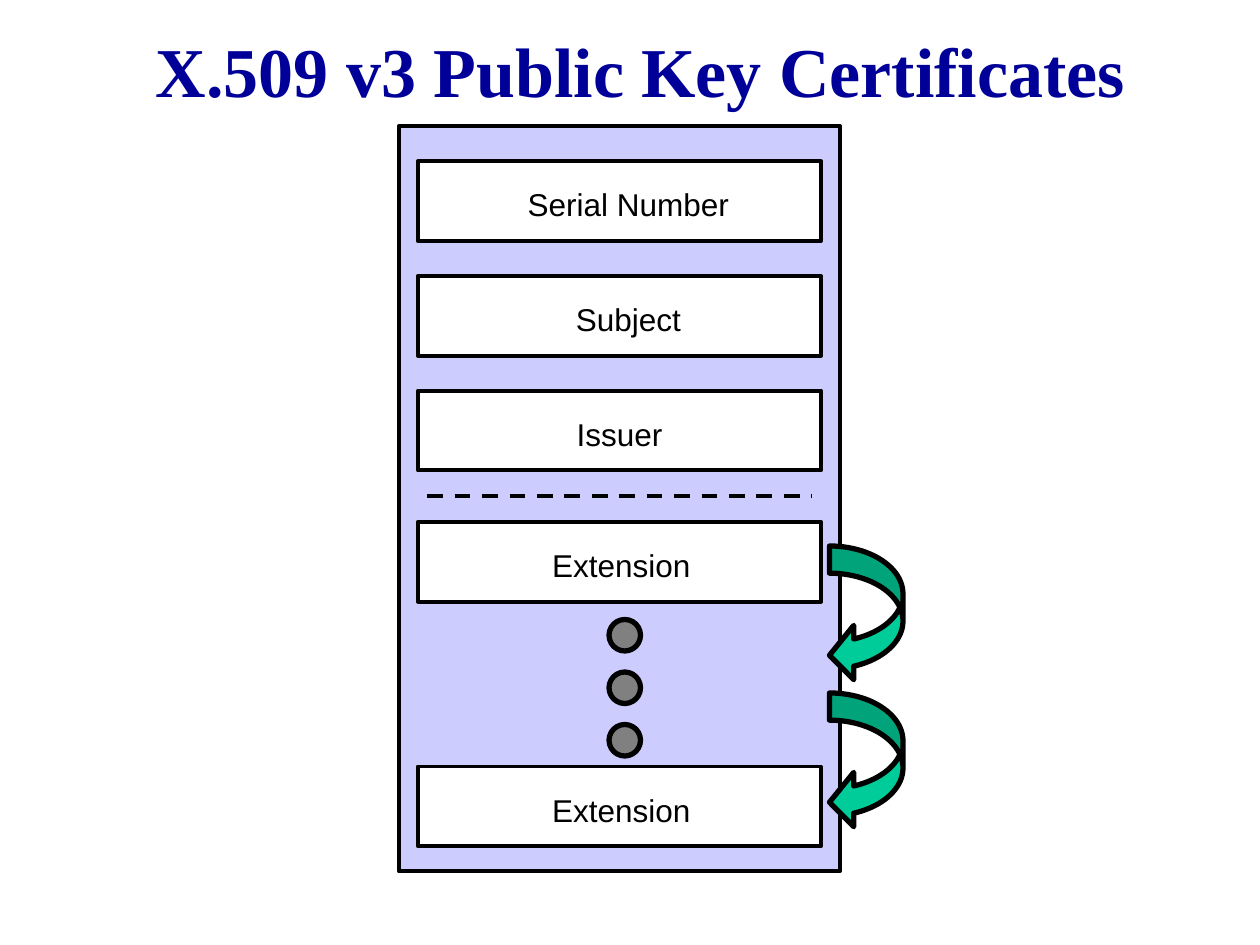
from dataclasses import dataclass

from lxml.etree import SubElement
from pptx import Presentation
from pptx.dml.color import RGBColor
from pptx.enum.dml import MSO_LINE_DASH_STYLE as Dash
from pptx.enum.shapes import MSO_CONNECTOR as Connector, MSO_SHAPE as Shape
from pptx.enum.text import MSO_ANCHOR as Anchor, PP_ALIGN as Align
from pptx.oxml.ns import qn
from pptx.util import Inches, Pt

COLUMNS, ROWS = 120, 90


@dataclass(frozen=True)
class Theme:
    title_color: str = "000099"
    ink: str = "000000"
    panel: str = "CCCCFF"
    field: str = "FFFFFF"
    arrow: str = "00CC99"
    dot: str = "808080"
    title_font: str = "Times New Roman"
    label_font: str = "Arial"
    title_size: float = 40
    label_size: float = 18
    thin: float = 2.25
    thick: float = 3


class CertificateSlide:
    """Places elements on a grid of COLUMNS by ROWS."""

    def __init__(self, deck, theme):
        self.theme = theme
        self.column = deck.slide_width / COLUMNS
        self.row = deck.slide_height / ROWS
        self.slide = deck.slides.add_slide(deck.slide_layouts[5])

    def area(self, left, top, width, height):
        return (round(left * self.column), round(top * self.row),
                round(width * self.column), round(height * self.row))

    def set_text(self, frame, text, font, size, color, align, bold=False):
        frame.word_wrap = True
        frame.vertical_anchor = Anchor.TOP
        paragraph = frame.paragraphs[0]
        paragraph.alignment = align
        run = paragraph.add_run()
        run.text = text
        run.font.name, run.font.size, run.font.bold = font, Pt(size), bold
        run.font.color.rgb = RGBColor.from_string(color)

    def outline(self, line, weight):
        line.color.rgb = RGBColor.from_string(self.theme.ink)
        line.width = Pt(weight)

    def title(self, text, *area):
        heading = self.slide.shapes.title
        heading.left, heading.top, heading.width, heading.height = self.area(*area)
        self.set_text(heading.text_frame, text, self.theme.title_font,
                      self.theme.title_size, self.theme.title_color, Align.CENTER, True)

    def block(self, kind, area, color, weight, adjustments=()):
        block = self.slide.shapes.add_shape(kind, *self.area(*area))
        block.shadow.inherit = False
        block.fill.solid()
        block.fill.fore_color.rgb = RGBColor.from_string(color)
        self.outline(block.line, weight)
        for index, value in enumerate(adjustments):
            block.adjustments[index] = value

    def label(self, text, area, align):
        label = self.slide.shapes.add_textbox(*self.area(*area))
        self.set_text(label.text_frame, text, self.theme.label_font,
                      self.theme.label_size, self.theme.ink, align)

    def field(self, text, top, label_left, label_width, align):
        self.block(Shape.RECTANGLE, (39.8, top, 38.4, 7.6),
                   self.theme.field, self.theme.thin)
        self.label(text, (label_left, top + 1.7, label_width, 4.8), align)

    def divider(self, left, right, row):
        x1, y, x2, _ = self.area(left, row, right, 0)
        divider = self.slide.shapes.add_connector(Connector.STRAIGHT, x1, y, x2, y)
        self.outline(divider.line, self.theme.thin)
        divider.line.dash_style = Dash.DASH
        SubElement(divider.element.spPr, qn("a:effectLst"))


def main():
    deck = Presentation()
    deck.slide_width, deck.slide_height = Inches(10), Inches(7.5)
    theme = Theme()
    page = CertificateSlide(deck, theme)

    page.title("X.509 v3 Public Key Certificates", 5, 2, 112, 9.2)

    # Certificate body
    page.block(Shape.RECTANGLE, (38, 12, 42, 71), theme.panel, theme.thin)

    # Fixed fields, then the line before the extensions
    fixed_fields = [("Serial Number", 46.9, 25.9),
                    ("Subject", 50.5, 18.7),
                    ("Issuer", 52.3, 13.4)]
    for index, (name, left, width) in enumerate(fixed_fields):
        page.field(name, 15.36 + 10.92 * index, left, width, Align.CENTER)
    page.divider(40.7, 77.3, 47.2)

    # First and last extension
    for top in (49.7, 73):
        page.field("Extension", top, 51.4, 17.9, Align.LEFT)

    # Arrows from one extension to the next
    for top in (52, 66):
        page.block(Shape.CURVED_LEFT_ARROW, (79, top, 7, 13), theme.arrow,
                   theme.thick, (0.37, 0.74, 0.33))

    # Dots for the extensions in between
    for top in (59, 64, 69):
        page.block(Shape.OVAL, (58, top, 3, 3), theme.dot, theme.thick)

    deck.save("out.pptx")


if __name__ == "__main__":
    main()
